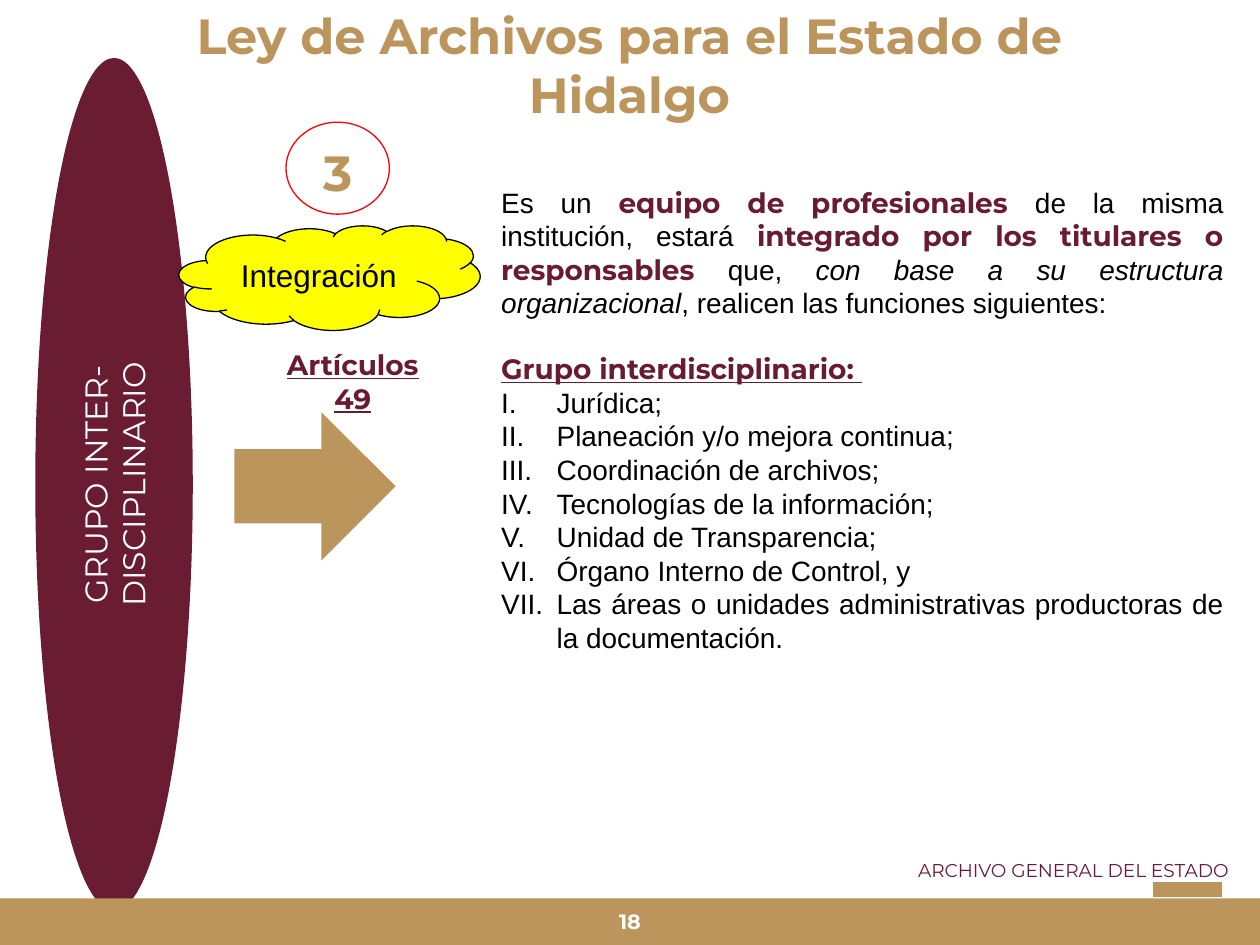
from dataclasses import dataclass

from lxml import etree
from pptx import Presentation
from pptx import util as u
from pptx.dml.color import RGBColor
from pptx.enum import shapes, text
from pptx.oxml import ns

UNIT = u.Inches(0.1)  # the slide is a grid of 100 columns by 75 rows
COLORS = {"wine": "691C32", "wine_text": "691B31", "gold": "BC955C", "yellow": "FFFF00",
          "red": "FF0000", "black": "000000", "white": "FFFFFF"}
ALIGN = text.PP_ALIGN
SHAPE = shapes.MSO_SHAPE
MIDDLE = text.MSO_ANCHOR.MIDDLE

PLAIN = dict(size=16, font="Arial", color="black")
STRONG = dict(size=16, font="Montserrat", color="wine_text", bold=True)
HEADING = dict(size=28.2, font="Montserrat", color="gold", bold=True)

INTRO = [
    ("Es un ", PLAIN),
    ("equipo de profesionales ", STRONG),
    ("de la misma institución, estará ", PLAIN),
    ("integrado por los titulares o responsables ", STRONG),
    ("que, ", PLAIN),
    ("con base a su estructura organizacional", dict(PLAIN, italic=True)),
    (", realicen las funciones siguientes:", PLAIN),
]
MEMBERS = [
    "Jurídica;",
    "Planeación y/o mejora continua;",
    "Coordinación de archivos;",
    "Tecnologías de la información;",
    "Unidad de Transparencia;",
    "Órgano Interno de Control, y",
    "Las áreas o unidades administrativas productoras de la documentación.",
]


@dataclass
class Box:
    """An area in grid columns and rows."""
    left: float
    top: float
    width: float
    height: float

    def inner(self, left, top, width, height):
        return Box(self.left + left, self.top + top, width, height)

    def lengths(self):
        return [round(n * UNIT) for n in (self.left, self.top, self.width, self.height)]


def color(name):
    return RGBColor.from_string(COLORS[name])


def add_shape(slide, kind, box, fill, line=None):
    shape = slide.shapes.add_shape(kind, *box.lengths())
    shape.shadow.inherit = False
    shape.fill.solid()
    shape.fill.fore_color.rgb = color(fill)
    if line:
        shape.line.color.rgb = color(line)
        shape.line.width = u.Pt(0.75)
    else:
        shape.line.fill.background()
    return shape


def prepare_frame(shape, anchor=text.MSO_ANCHOR.TOP, insets=(0.1, 0.05)):
    frame = shape.text_frame
    frame.word_wrap = True
    frame.vertical_anchor = anchor
    frame.margin_left = frame.margin_right = u.Inches(insets[0])
    frame.margin_top = frame.margin_bottom = u.Inches(insets[1])
    return frame


def add_text_box(slide, box, **frame_options):
    return prepare_frame(slide.shapes.add_textbox(*box.lengths()), **frame_options)


def write(frame, runs, align=ALIGN.CENTER):
    """Fill the first paragraph if it is still empty, otherwise add one."""
    last = frame.paragraphs[-1]
    paragraph = frame.add_paragraph() if last.runs else last
    paragraph.alignment = align
    for words, style in runs:
        run = paragraph.add_run()
        run.text = words
        font = run.font
        font.name = style["font"]
        font.size = u.Pt(style["size"])
        font.color.rgb = color(style["color"])
        font.bold = style.get("bold", False)
        font.italic = style.get("italic", False)
        font.underline = style.get("underline", False)
    return paragraph


def number_roman(paragraph, indent):
    properties = paragraph._p.get_or_add_pPr()
    properties.set("marL", str(indent))
    properties.set("indent", str(-indent))
    etree.SubElement(properties, ns.qn("a:buFont"), typeface="Arial")
    etree.SubElement(properties, ns.qn("a:buAutoNum"), type="romanUcPeriod")


def add_side_label(slide, box):
    oval = add_shape(slide, SHAPE.OVAL, box, "wine")
    frame = prepare_frame(oval, MIDDLE, (0.08, 0.04))
    frame._txBody.bodyPr.set("vert", "vert270")
    style = dict(size=18, font="Montserrat", color="white")
    for words in ("GRUPO INTER-", "DISCIPLINARIO"):
        write(frame, [(words, style)])


def add_topic(slide, box):
    """Number, cloud, article and arrow, from top to bottom."""
    add_shape(slide, SHAPE.RIGHT_ARROW, box.inner(4.4, 23, 12.8, 11.8), "gold")

    circle = add_shape(slide, SHAPE.OVAL, box.inner(8.5, 0, 8.2, 7.3), "white", "red")
    write(prepare_frame(circle), [("3", HEADING)])

    article = add_text_box(slide, box.inner(6, 17.4, 15.6, 3.7))
    write(article, [("Artículos 49", dict(STRONG, underline=True))])

    cloud = add_shape(slide, SHAPE.CLOUD, box.inner(0, 8.2, box.width, 8.3), "yellow", "black")
    write(prepare_frame(cloud, MIDDLE), [("Integración", dict(PLAIN, size=18))])


def add_body(slide, box):
    frame = add_text_box(slide, box)
    write(frame, INTRO, ALIGN.JUSTIFY)
    group = [("Grupo interdisciplinario: ", dict(STRONG, underline=True))]
    write(frame, group, ALIGN.JUSTIFY).space_before = u.Pt(18.5)
    for member in MEMBERS:
        number_roman(write(frame, [(member, PLAIN)], ALIGN.JUSTIFY), u.Inches(0.44))


def add_title(slide, box):
    frame = add_text_box(slide, box, insets=(0.09, 0.04))
    write(frame, [("Ley de Archivos para el Estado de Hidalgo", HEADING)])


def add_footer(slide, box):
    """Office name and its underline above a bar with the page number."""
    bar_top = box.height - 3.7
    add_shape(slide, SHAPE.RECTANGLE, box.inner(0, bar_top, box.width, 3.7), "gold")

    page = add_text_box(slide, box.inner(47.8, bar_top + 0.1, 4.8, 3.7),
                        anchor=MIDDLE, insets=(0.1, 0.1))
    style = dict(size=11.8, font="Montserrat", color="white", bold=True)
    write(page, [("18", style)]).line_spacing = 0.9

    office = add_text_box(slide, box.inner(47.8, 0, 50.5, 2.8), insets=(0.06, 0.06))
    style = dict(size=10.6, font="Montserrat", color="wine_text")
    write(office, [("ARCHIVO GENERAL DEL ESTADO", style)], ALIGN.RIGHT).line_spacing = 0.9

    left, top, width, _ = box.inner(91.7, 2.8, 5.5, 0).lengths()
    underline = slide.shapes.add_connector(
        shapes.MSO_CONNECTOR.STRAIGHT, left, top, left + width, top)
    underline.line.color.rgb = color("gold")
    underline.line.width = u.Pt(9)
    etree.SubElement(underline._element.spPr, ns.qn("a:effectLst"))


def main():
    presentation = Presentation()
    presentation.slide_width = 100 * UNIT
    presentation.slide_height = 75 * UNIT
    slide = presentation.slides.add_slide(presentation.slide_layouts[6])
    add_side_label(slide, Box(2.8, 4.6, 12.5, 67.7))
    add_topic(slide, Box(14.2, 9.7, 23.9, 34.8))
    add_body(slide, Box(38.8, 14.2, 59.3, 38.7))
    add_title(slide, Box(7.7, 0, 84.5, 5.7))
    add_footer(slide, Box(-0.2, 67.8, 100.6, 7.2))
    presentation.save("out.pptx")


if __name__ == "__main__":
    main()
